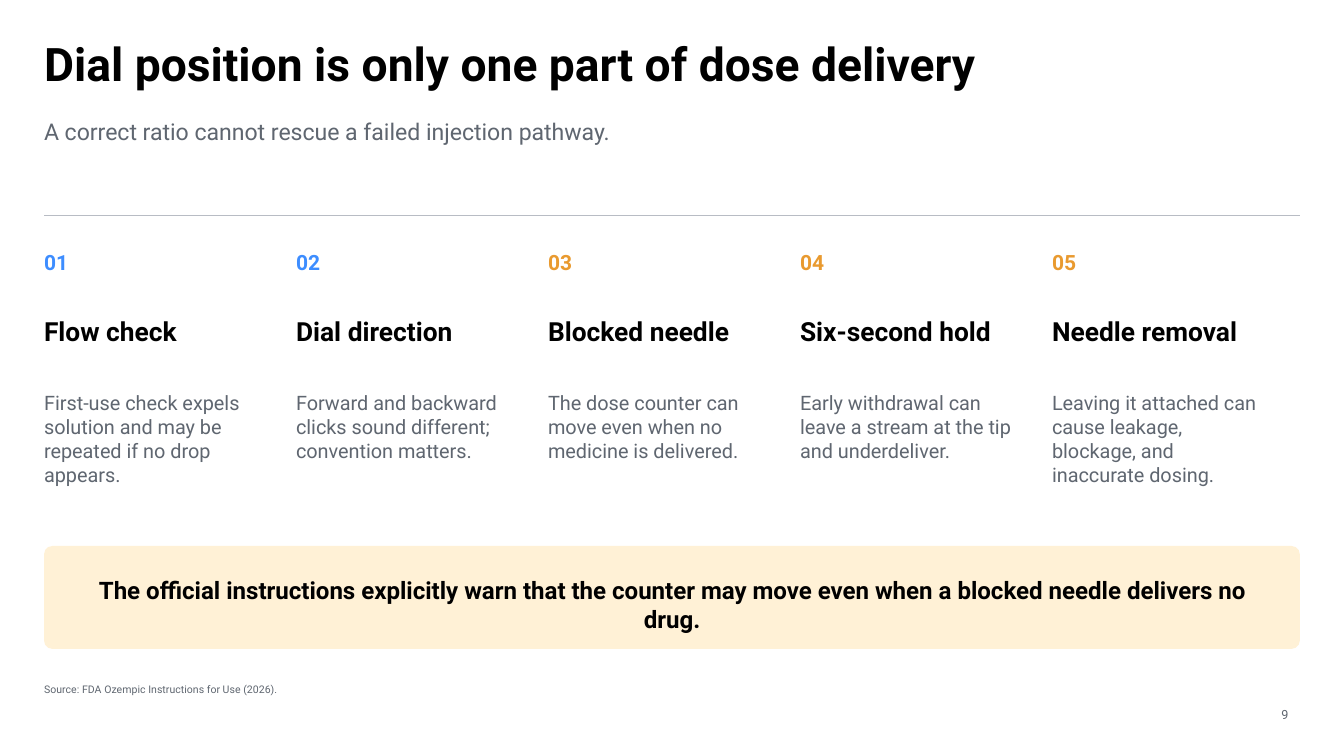
from dataclasses import dataclass

from lxml import etree
from pptx import Presentation
from pptx import util as u
from pptx.dml.color import RGBColor
from pptx.enum import shapes, text
from pptx.oxml import ns


@dataclass(frozen=True)
class Theme:
    """Colours, type sizes and font of the deck."""
    font: str = "Roboto"
    ink: str = "000000"
    muted: str = "5F6670"
    blue: str = "3D8DFF"
    amber: str = "E99A2F"
    cream: str = "FFF1D6"
    rule: str = "B8BCC4"
    title: float = 33
    subtitle: float = 16.5
    number: float = 15
    heading: float = 18.8
    body: float = 14.2
    callout: float = 17.2
    source: float = 7.5
    page: float = 9


THEME = Theme()
PX = 9525
STEPS = [
    ("Flow check", "First-use check expels solution and may be repeated if no drop appears.", THEME.blue),
    ("Dial direction", "Forward and backward clicks sound different; convention matters.", THEME.blue),
    ("Blocked needle", "The dose counter can move even when no medicine is delivered.", THEME.amber),
    ("Six-second hold", "Early withdrawal can leave a stream at the tip and underdeliver.", THEME.amber),
    ("Needle removal", "Leaving it attached can cause leakage, blockage, and inaccurate dosing.", THEME.amber),
]


def px(*lengths):
    """Turn whole pixels into EMU lengths."""
    return [u.Emu(length * PX) for length in lengths]


def write(box, words, size, colour, bold=False,
          align=text.PP_ALIGN.LEFT, anchor=text.MSO_ANCHOR.TOP):
    """Put one formatted paragraph into a box without insets."""
    frame = box.text_frame
    frame.text = words
    frame.word_wrap = True
    frame.auto_size = text.MSO_AUTO_SIZE.NONE
    frame.vertical_anchor = anchor
    frame.margin_left = frame.margin_top = frame.margin_right = frame.margin_bottom = 0
    para = frame.paragraphs[0]
    para.alignment = align
    for span in para.runs:
        span.font.name = THEME.font
        span.font.size = u.Pt(size)
        span.font.bold = bold
        span.font.color.rgb = RGBColor.from_string(colour)


def label(page, box, *args, **options):
    """Add a text box at the given pixel box."""
    write(page.shapes.add_textbox(*px(*box)), *args, **options)


def header(page, left, top, width):
    """Place the title and the subtitle."""
    title = page.shapes.title
    title.left, title.top, title.width, title.height = px(left, top, width, 92)
    write(title, "Dial position is only one part of dose delivery", THEME.title, THEME.ink, bold=True)
    label(page, (left, top + 78, 1000, 40),
          "A correct ratio cannot rescue a failed injection pathway.", THEME.subtitle, THEME.muted)


def divider(page, left, top, width):
    """Draw the thin rule above the steps."""
    line = page.shapes.add_connector(shapes.MSO_CONNECTOR.STRAIGHT, *px(left, top, left + width, top))
    line.line.color.rgb = RGBColor.from_string(THEME.rule)
    line.line.width = u.Pt(0.75)
    etree.SubElement(line._element.spPr, ns.qn("a:effectLst"))


def steps(page, left, top, pitch):
    """Place the numbered steps in equal columns."""
    for index, (heading, body, accent) in enumerate(STEPS):
        column = left + index * pitch
        label(page, (column, top, 180, 35), f"{index + 1:02}", THEME.number, accent, bold=True)
        label(page, (column, top + 62, 205, 52), heading, THEME.heading, THEME.ink, bold=True)
        label(page, (column, top + 134, 205, 110), body, THEME.body, THEME.muted)


def callout(page, left, top, width, height):
    """Place the rounded warning panel and its text."""
    panel = page.shapes.add_shape(shapes.MSO_SHAPE.ROUNDED_RECTANGLE, *px(left, top, width, height))
    panel.adjustments[0] = 0.08
    panel.shadow.inherit = False
    panel.fill.solid()
    panel.fill.fore_color.rgb = RGBColor.from_string(THEME.cream)
    panel.line.fill.background()
    label(page, (left + 36, top + 28, width - 72, 55),
          "The official instructions explicitly warn that the counter may move even when"
          " a blocked needle delivers no drug.",
          THEME.callout, THEME.ink, bold=True, align=text.PP_ALIGN.CENTER)


def footer(page, left, top, width):
    """Place the source line and the page number."""
    label(page, (left, top, 1120, 32),
          "Source: FDA Ozempic Instructions for Use (2026).", THEME.source, THEME.muted)
    label(page, (left + width - 53, top + 20, 42, 18), "9", THEME.page, THEME.muted,
          align=text.PP_ALIGN.RIGHT, anchor=text.MSO_ANCHOR.BOTTOM)


def main():
    """Build the slide and save the deck."""
    deck = Presentation()
    deck.slide_width, deck.slide_height = px(1280, 720)
    page = deck.slides.add_slide(deck.slide_layouts.get_by_name("Title Only"))
    left, width = 42, 1196
    header(page, left, 34, width)
    divider(page, left, 205, width)
    steps(page, left, 238, 240)
    callout(page, left, 520, width, 98)
    footer(page, left, 650, width)
    deck.save("out.pptx")


if __name__ == "__main__":
    main()
